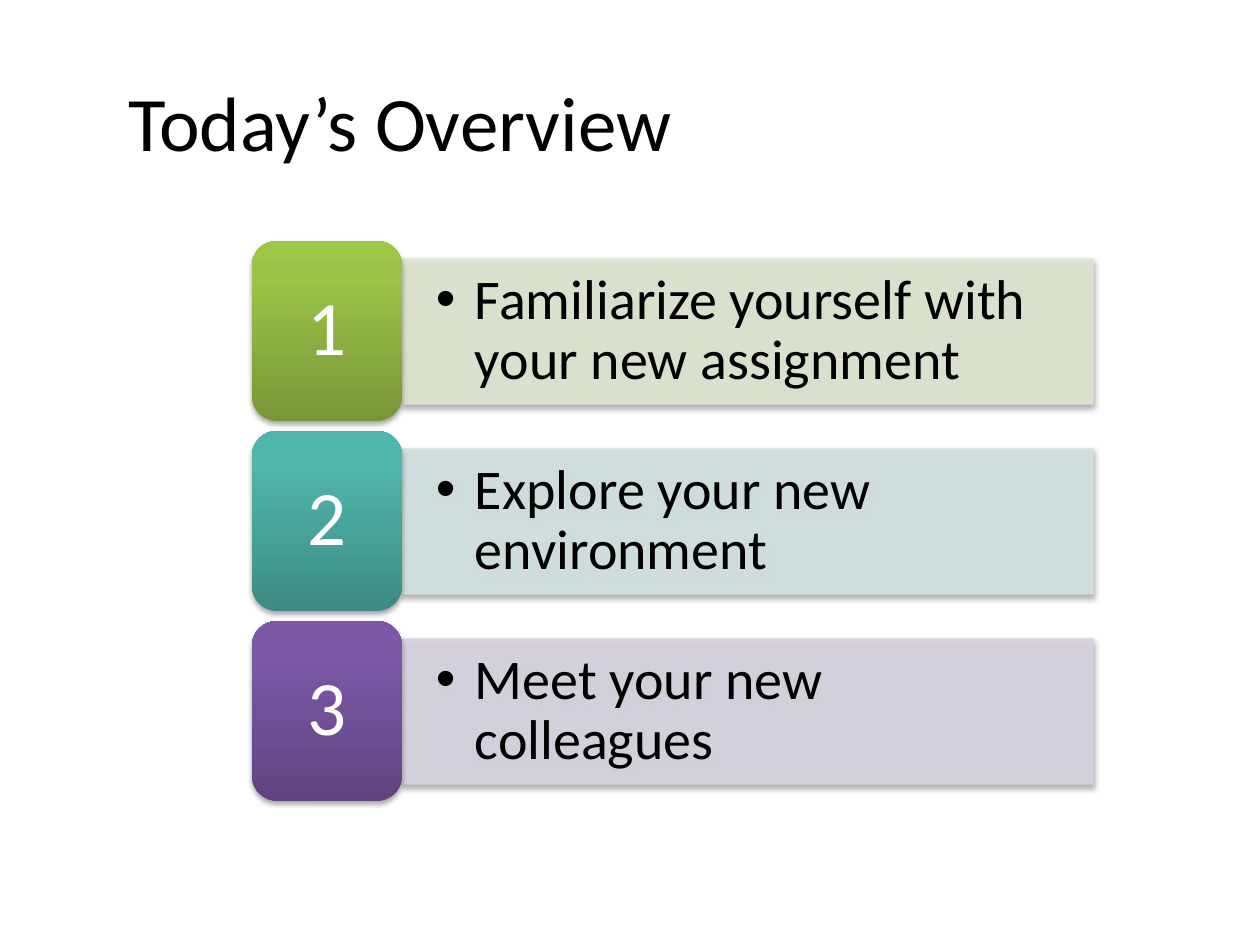
from lxml import etree
from pptx import Presentation
from pptx import util as u
from pptx.dml.color import RGBColor
from pptx.enum import shapes, text
from pptx.oxml import ns, parse_xml

BLACK = RGBColor(0x00, 0x00, 0x00)
WHITE = RGBColor(0xFF, 0xFF, 0xFF)
LIME = [RGBColor.from_string(c) for c in ("779737", "9BC348", "9DC746")]
TEAL = [RGBColor.from_string(c) for c in ("3D8B83", "50B5AA", "4EB8AC")]
PLUM = [RGBColor.from_string(c) for c in ("5F4480", "7B58A6", "7C57A8")]
SAGE = RGBColor(0xDE, 0xE7, 0xD1)
MIST = RGBColor(0xD2, 0xE3, 0xE2)
LILAC = RGBColor(0xD8, 0xD3, 0xE0)

STEPS = [
    ("Familiarize yourself with your new assignment", LIME, SAGE),
    ("Explore your new environment", TEAL, MIST),
    ("Meet your new colleagues", PLUM, LILAC),
]
TOP, PITCH = 241, 190


def px(n):
    return u.Emu(round(n * 914400 / 126))


def assign(item, values):
    for key, value in values.items():
        setattr(item, key, value)


def node(up, tag, **attrs):
    return etree.SubElement(up, ns.qn(tag), attrs)


class Deck:
    font = "Calibri"

    def __init__(self):
        self.prs = Presentation()
        assign(self.prs, {"slide_width": px(1260), "slide_height": px(945)})
        self.slide = self.prs.slides.add_slide(self.prs.slide_layouts[5])

    def label(self, shape, words, size, color, align, pads=None):
        frame = shape.text_frame
        frame.text = words
        assign(frame, {"word_wrap": True, "vertical_anchor": text.MSO_ANCHOR.MIDDLE})
        if pads:
            sides = ("margin_left", "margin_top", "margin_right", "margin_bottom")
            assign(frame, dict(zip(sides, map(px, pads * 2))))
        para = frame.paragraphs[0]
        para.alignment = align
        run = para.runs[0].font
        assign(run, {"name": self.font, "size": u.Pt(size)})
        run.color.rgb = color
        return para

    def title(self, words, box):
        head = self.slide.shapes.title
        assign(head, dict(zip(("left", "top", "width", "height"), map(px, box))))
        self.label(head, words, 44, BLACK, text.PP_ALIGN.LEFT)

    def shape(self, kind, box):
        item = self.slide.shapes.add_shape(kind, *map(px, box))
        item.line.fill.background()
        item.shadow.inherit = False
        return item

    def shade(self, item):
        effects = item._element.spPr.find(ns.qn("a:effectLst"))
        outer = node(effects, "a:outerShdw", blurRad="40000", dist="23000",
                     dir="5400000", rotWithShape="0")
        black = node(outer, "a:srgbClr", val=str(BLACK))
        node(black, "a:alpha", val="35000")

    def bar(self, words, color, box):
        item = self.shape(shapes.MSO_SHAPE.RECTANGLE, box)
        item.line.width = u.Pt(0.75)
        for fill in (item.fill, item.line.fill):
            fill.solid()
            fill.fore_color.rgb = color
        for tint in item._element.spPr.findall(".//" + ns.qn("a:srgbClr")):
            node(tint, "a:alpha", val="90000")
        self.shade(item)
        para = self.label(item, words, 32, BLACK, text.PP_ALIGN.LEFT, (34, 18))
        para.line_spacing = 0.9
        props = para._p.get_or_add_pPr()
        props.set("marL", str(px(39)))
        props.set("indent", str(px(-39)))
        node(props, "a:buFont", typeface="Arial")
        node(props, "a:buChar", char="•")

    def tile(self, words, colors, box):
        item = self.shape(shapes.MSO_SHAPE.ROUNDED_RECTANGLE, box)
        grad = parse_xml(f'<a:gradFill {ns.nsdecls("a")} rotWithShape="1"/>')
        stops = node(grad, "a:gsLst")
        for pos, color in zip((0, 80000, 100000), colors):
            stop = node(stops, "a:gs", pos=str(pos))
            node(stop, "a:srgbClr", val=str(color))
        node(grad, "a:lin", ang="16200000", scaled="0")
        item._element.spPr.find(ns.qn("a:prstGeom")).addnext(grad)
        self.shade(item)
        para = self.label(item, words, 44, WHITE, text.PP_ALIGN.CENTER, (30, 18))
        para.line_spacing = 0.9


def main():
    deck = Deck()
    deck.title("Today’s Overview", (116, 42, 1113, 157))
    for i, (words, colors, pale) in enumerate(STEPS):
        top = TOP + i * PITCH
        deck.bar(words, pale, (402, top + 18, 691, 145))
        deck.tile(str(i + 1), colors, (252, top, 150, 180))
    deck.prs.save("out.pptx")


if __name__ == "__main__":
    main()
